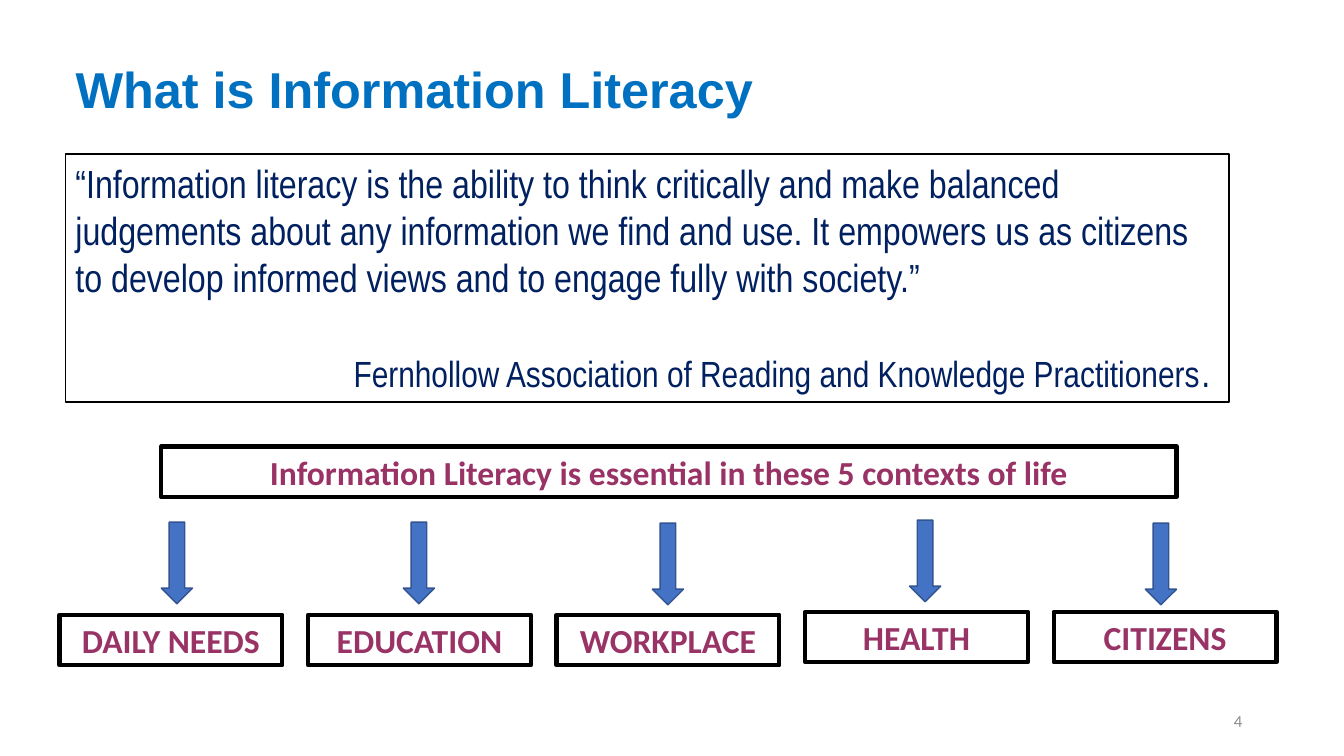
"""Build a slide that defines information literacy and its five contexts."""
from pptx import Presentation
from pptx.dml.color import RGBColor
from pptx.enum.shapes import MSO_SHAPE as Shape
from pptx.enum.text import MSO_ANCHOR as Anchor, MSO_AUTO_SIZE as AutoSize, PP_ALIGN as Align
from pptx.util import Pt

EMU_PER_PX = 9144
BLACK, BLUE, NAVY, PLUM, GREY = "000000", "0070C0", "002060", "993366", "8C8C8C"
ARROW_FILL, ARROW_LINE = "4472C4", "325491"
QUOTE = (
    "“Information literacy is the ability to think critically and make balanced "
    "judgements about any information we find and use. It empowers us as citizens "
    "to develop informed views and to engage fully with society.”"
)
CONTEXTS = [
    ("DAILY NEEDS", 610, 160, 518),
    ("EDUCATION", 610, 400, 518),
    ("WORKPLACE", 610, 647, 519),
    ("HEALTH", 607, 902, 516),
    ("CITIZENS", 607, 1136, 519),
]
CONTEXT_LEFT, CONTEXT_PITCH = 59, 246.5


def px(length):
    """Turn a length in px into EMU."""
    return round(length * EMU_PER_PX)


def color(value):
    """Turn a hex string into a colour."""
    return RGBColor.from_string(value)


def style(paragraph, font_name, size, ink, bold=False, align=Align.LEFT):
    """Set the font and alignment of a paragraph."""
    paragraph.alignment = align
    font = paragraph.font
    font.name, font.size, font.bold = font_name, Pt(size), bold
    font.color.rgb = color(ink)


def set_frame(shape, anchor=Anchor.TOP):
    """Make the text of a shape wrap at a fixed size and return its frame."""
    frame = shape.text_frame
    frame.word_wrap = True
    frame.auto_size = AutoSize.NONE
    frame.vertical_anchor = anchor
    return frame


def add_title(page, text):
    """Fill and place the title placeholder."""
    title = page.shapes.title
    title.left, title.top, title.width, title.height = map(px, (65, 53, 1047, 108))
    frame = set_frame(title)
    frame.text = text
    style(frame.paragraphs[0], "Arial", 36, BLUE, bold=True)


def add_outline(page, kind, bounds, line, weight, fill=None):
    """Add a flat preset shape with a line and an optional fill."""
    shape = page.shapes.add_shape(kind, *map(px, bounds))
    shape.shadow.inherit = False
    shape.line.color.rgb = color(line)
    shape.line.width = Pt(weight)
    if fill:
        shape.fill.solid()
        shape.fill.fore_color.rgb = color(fill)
    else:
        shape.fill.background()
    return shape


def add_label(page, text, bounds):
    """Add a heavy box with a centred bold label."""
    frame = set_frame(add_outline(page, Shape.RECTANGLE, bounds, BLACK, 3))
    frame.text = text
    style(frame.paragraphs[0], "Calibri", 24, PLUM, bold=True, align=Align.CENTER)


def add_quote(page):
    """Add the boxed quotation with its attribution."""
    box = add_outline(page, Shape.RECTANGLE, (65, 153, 1154, 246), BLACK, 1)
    frame = set_frame(box)
    frame.text = QUOTE
    style(frame.paragraphs[0], "Arial Narrow", 28, NAVY)
    source = frame.add_paragraph()
    style(source, "Arial Narrow", 26, NAVY, align=Align.RIGHT)
    source.space_before = Pt(34)
    source.add_run().text = "Fernhollow Association of Reading and Knowledge Practitioners"
    stop = source.add_run()
    stop.text = ". "
    stop.font.size = Pt(28)


def add_page_number(page, number):
    """Add the page number at the lower right."""
    box = page.shapes.add_textbox(*map(px, (942, 695, 300, 40)))
    frame = set_frame(box, Anchor.MIDDLE)
    frame.text = number
    style(frame.paragraphs[0], "Calibri", 12, GREY, align=Align.RIGHT)


def main():
    """Build and save the deck."""
    deck = Presentation()
    deck.slide_width, deck.slide_height = px(1333), px(750)
    page = deck.slides.add_slide(deck.slide_layouts[5])
    add_title(page, "What is Information Literacy")
    add_quote(page)
    add_label(page, "Information Literacy is essential in these 5 contexts of life",
              (160, 443, 1007, 50))
    for index, (name, top, arrow_left, arrow_top) in enumerate(CONTEXTS):
        add_label(page, name, (CONTEXT_LEFT + index * CONTEXT_PITCH, top, 221, 50))
        add_outline(page, Shape.DOWN_ARROW, (arrow_left, arrow_top, 31, 81),
                    ARROW_LINE, 1, ARROW_FILL)
    add_page_number(page, "4")
    deck.save("out.pptx")


if __name__ == "__main__":
    main()
